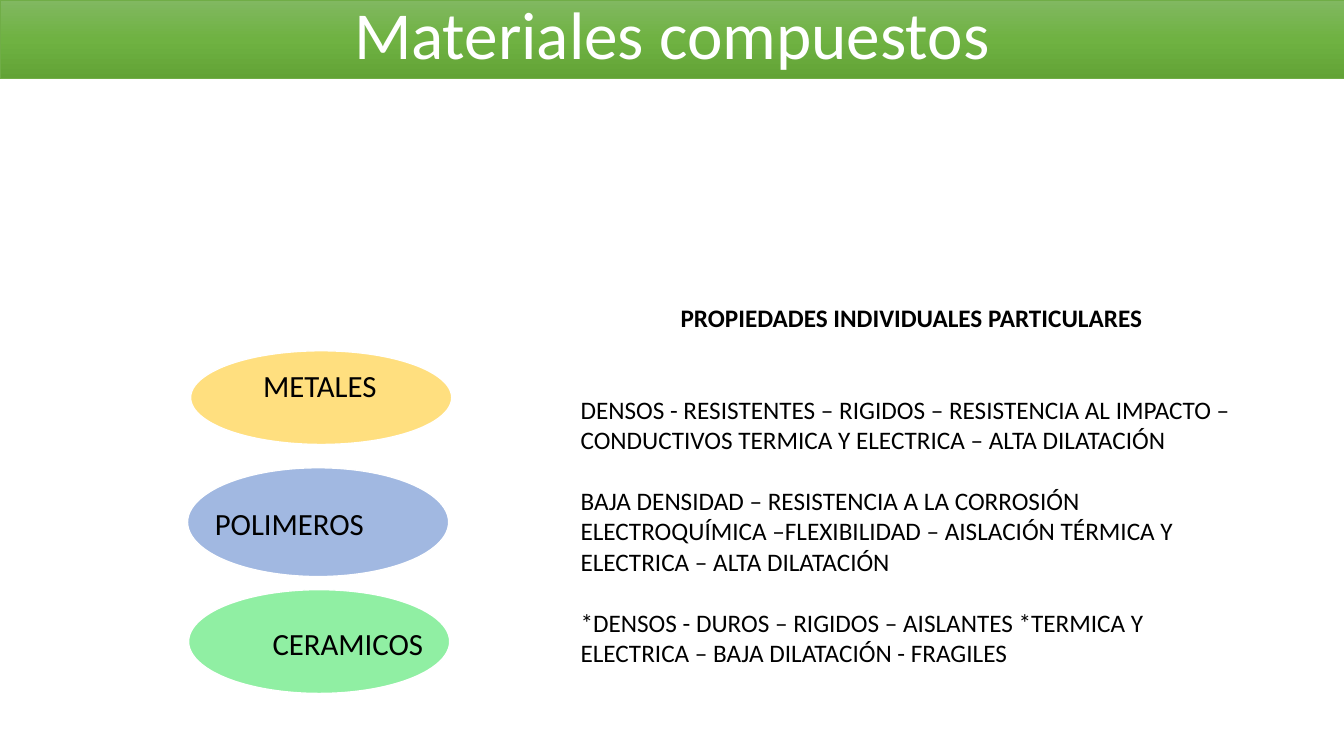
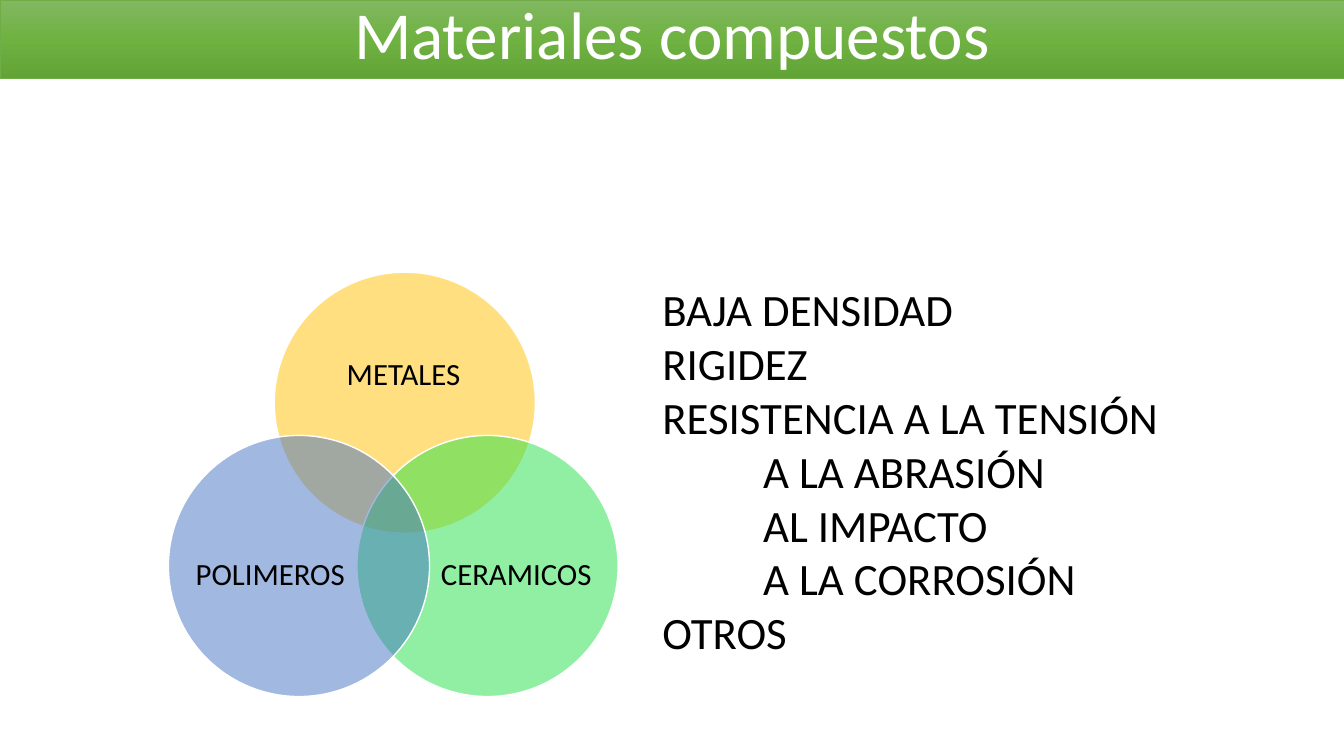
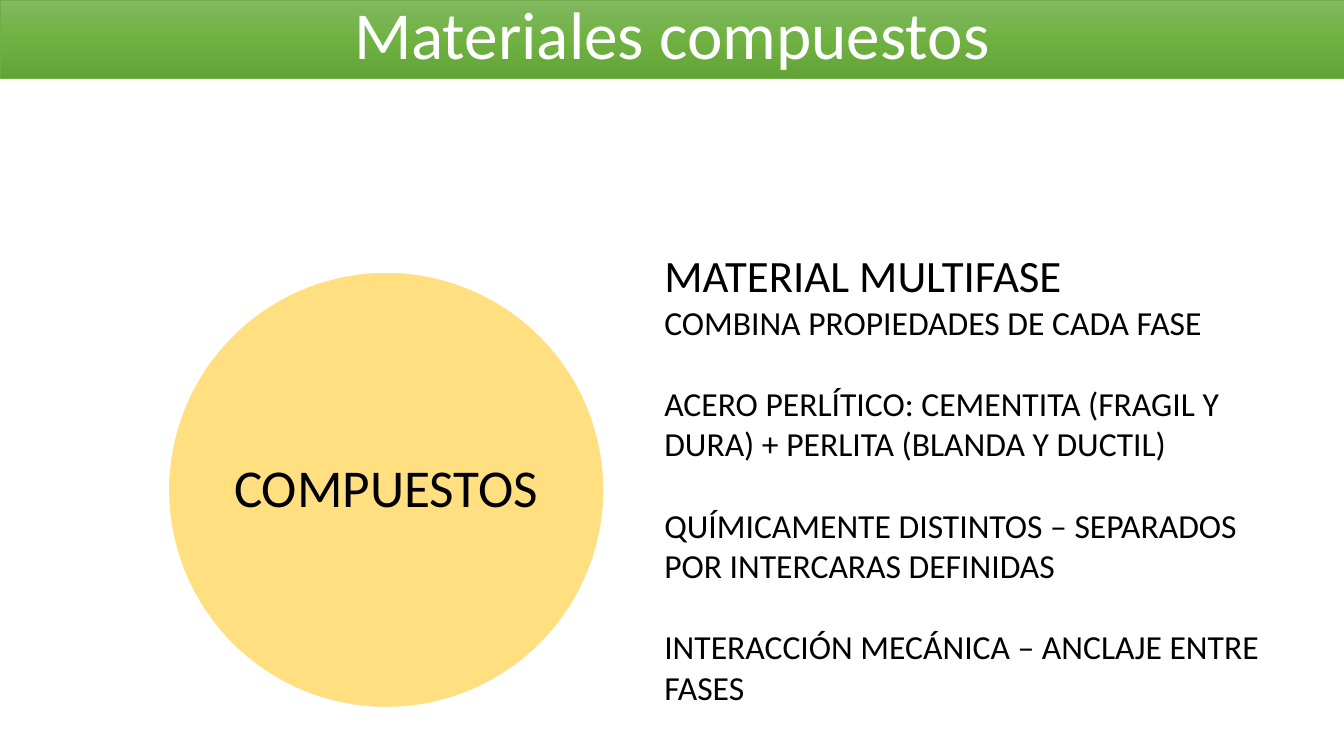
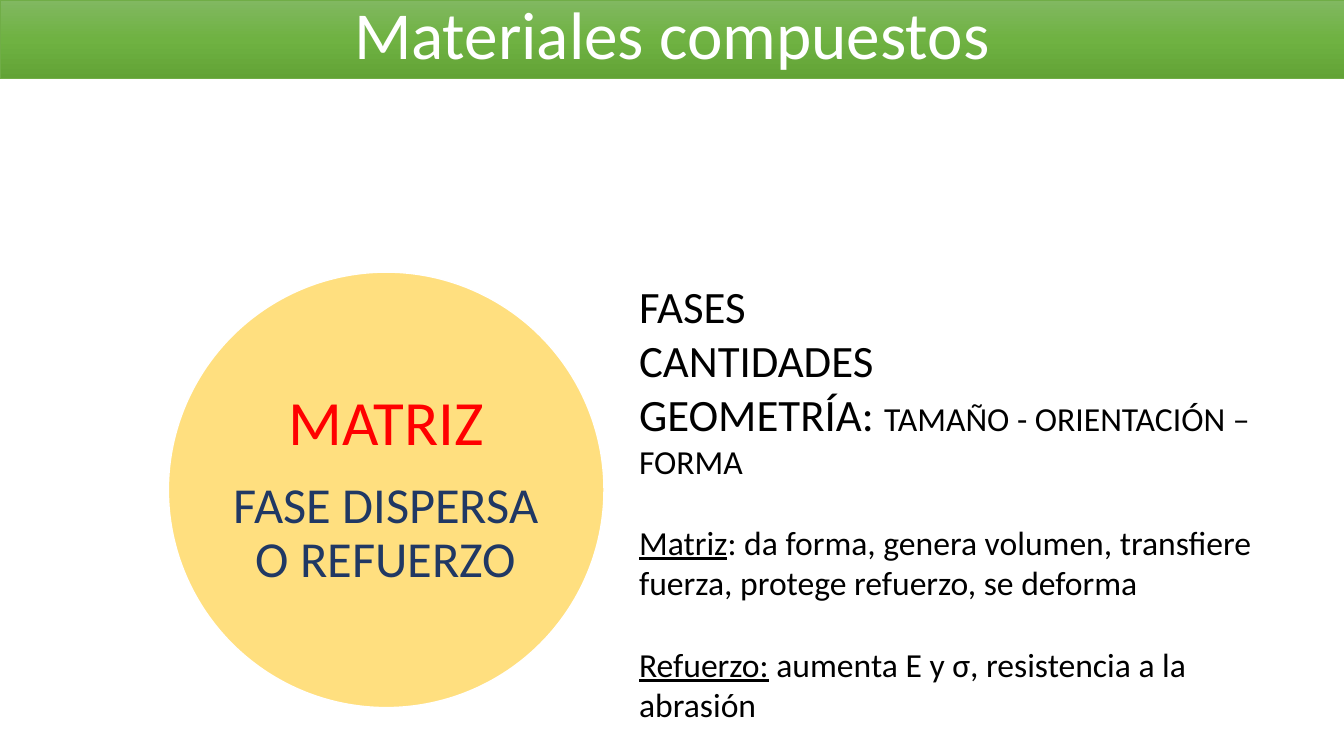
from copy import deepcopy
from dataclasses import dataclass
from typing import NamedTuple

from lxml.etree import SubElement
from pptx import Presentation
from pptx.dml.color import RGBColor
from pptx.enum.shapes import MSO_SHAPE as SHAPE
from pptx.enum.text import MSO_ANCHOR as ANCHOR, PP_ALIGN as ALIGN
from pptx.oxml.ns import qn
from pptx.util import Inches, Pt

WIDTH, HEIGHT = 13.33, 7.5
FONT = "Calibri"
TITLE = "Materiales compuestos"
COLORS = {
    "text": "000000", "white": "FFFFFF", "matrix": "FF0000", "reinforcement": "203864",
    "band_top": "81B861", "band_middle": "6FB242", "band_bottom": "62A336",
    "band_line": "70AD47",
    "metals": "FFC000", "polymers": "4472C4", "ceramics": "23E148",
}


class Box(NamedTuple):
    """Left, top, width and height in inches."""
    x: float
    y: float
    w: float
    h: float

    def inner(self, x, y, w, h):
        """Inner box, given as shares of this one."""
        return Box(self.x + x * self.w, self.y + y * self.h, w * self.w, h * self.h)

    def emu(self):
        return [Inches(v) for v in self]


@dataclass
class Par:
    """A paragraph; runs is a string or a list of (text, font settings)."""
    runs: object
    size: float
    before: float = 0
    after: float = 0
    indent: float = 0
    color: str = "text"
    bold: bool = False
    align: object = ALIGN.LEFT
    spacing: float = 1.0


PAGE = Box(0, 0, WIDTH, HEIGHT)
BIG_CIRCLE = Box(1.67, 2.7, 4.32, 4.32)
# Material: (label, label box as shares of its ellipse)
MATERIALS = {
    "metals": ("METALES", (0.13, 0.17, 0.73, 0.45)),
    "ceramics": ("CERAMICOS", (0.31, 0.26, 0.6, 0.55)),
    "polymers": ("POLIMEROS", (0.09, 0.26, 0.6, 0.55)),
}


def rgb(name):
    return RGBColor.from_string(COLORS[name])


def line_height(size):
    """Height of one line of the font, used as the gap between text groups."""
    return round(1.22 * size, 1)


def write(tf, pars):
    tf.word_wrap = True
    for i, par in enumerate(pars):
        p = tf.paragraphs[0] if i == 0 else tf.add_paragraph()
        p.alignment, p.line_spacing = par.align, par.spacing
        p.space_before, p.space_after = Pt(par.before), Pt(par.after)
        if par.indent:
            pPr = p._p.get_or_add_pPr()
            pPr.set("marL", str(Inches(par.indent)))
            pPr.set("indent", "0")
        p.font.name, p.font.size, p.font.bold = FONT, Pt(par.size), par.bold
        p.font.color.rgb = rgb(par.color)
        runs = [(par.runs, {})] if isinstance(par.runs, str) else par.runs
        for text, settings in runs:
            r = p.add_run()
            r.text = text
            r.font.size = settings.get("size")
            r.font.underline = settings.get("underline")


def add_text(slide, box, pars):
    tf = slide.shapes.add_textbox(*box.emu()).text_frame
    write(tf, pars)
    return tf


def add_label(slide, box, pars):
    """Centred text without margins."""
    for par in pars:
        par.align, par.spacing = ALIGN.CENTER, 0.9
    tf = add_text(slide, box, pars)
    tf.vertical_anchor = ANCHOR.MIDDLE
    tf.margin_left = tf.margin_right = tf.margin_top = tf.margin_bottom = 0


def add_title_band(slide, box):
    sp = slide.shapes.add_shape(SHAPE.RECTANGLE, *box.emu())
    sp.shadow.inherit = False
    sp.fill.gradient()
    sp.fill.gradient_angle = 270
    stops = sp._element.spPr.find(".//" + qn("a:gsLst"))
    stops.insert(1, deepcopy(stops[0]))
    names = ("band_top", "band_middle", "band_bottom")
    for i, (stop, name) in enumerate(zip(sp.fill.gradient_stops, names)):
        stop.color.rgb = rgb(name)
        stop.position = i / 2
    sp.line.color.rgb, sp.line.width = rgb("band_line"), Pt(0.5)
    sp.text_frame.vertical_anchor = ANCHOR.BOTTOM
    write(sp.text_frame, [Par(TITLE, 48, color="white", align=ALIGN.CENTER, spacing=0.9)])


def add_ellipse(slide, box, color):
    """Half-transparent ellipse with a white outline."""
    sp = slide.shapes.add_shape(SHAPE.OVAL, *box.emu())
    sp.shadow.inherit = False
    sp.fill.solid()
    sp.fill.fore_color.rgb = rgb(color)
    SubElement(sp._element.spPr.find(".//" + qn("a:srgbClr")), qn("a:alpha"), val="50000")
    sp.line.color.rgb, sp.line.width = rgb("white"), Pt(1)


def add_material(slide, box, name):
    label, shares = MATERIALS[name]
    add_ellipse(slide, box, name)
    add_label(slide, box.inner(*shares), [Par(label, 22)])


def add_big_circle(slide, box, pars):
    add_ellipse(slide, box, "metals")
    add_label(slide, box.inner(0.15, 0.15, 0.7, 0.7), pars)


def new_slide(prs):
    slide = prs.slides.add_slide(prs.slide_layouts[6])
    add_title_band(slide, PAGE.inner(0, 0, 1, 0.78 / HEIGHT))
    return slide


def materials_slide(prs, ellipses, text_box, pars):
    slide = new_slide(prs)
    for name, box in ellipses.items():
        add_material(slide, box, name)
    add_text(slide, text_box, pars)


def circle_slide(prs, circle_pars, text_box, pars):
    slide = new_slide(prs)
    add_big_circle(slide, BIG_CIRCLE, circle_pars)
    add_text(slide, text_box, pars)


def main():
    prs = Presentation()
    prs.slide_width, prs.slide_height = Inches(WIDTH), Inches(HEIGHT)

    diameter = 2.59
    gap = line_height(18)
    materials_slide(
        prs,
        {"metals": Box(1.89, 3.48, diameter, 0.93),
         "ceramics": Box(1.87, 5.85, diameter, 1.03),
         "polymers": Box(1.86, 4.64, diameter, 1.08)},
        Box(5.66, 2.95, 6.76, 4.04),
        [Par("PROPIEDADES INDIVIDUALES PARTICULARES", 18, bold=True, align=ALIGN.CENTER),
         Par("DENSOS - RESISTENTES – RIGIDOS – RESISTENCIA AL IMPACTO – "
             "CONDUCTIVOS TERMICA Y ELECTRICA – ALTA DILATACIÓN", 18, before=2 * gap),
         Par("BAJA DENSIDAD – RESISTENCIA A LA CORROSIÓN ELECTROQUÍMICA –FLEXIBILIDAD – "
             "AISLACIÓN TÉRMICA Y ELECTRICA – ALTA DILATACIÓN", 18, before=gap),
         Par("*DENSOS - DUROS – RIGIDOS – AISLANTES *TERMICA Y ELECTRICA – "
             "BAJA DILATACIÓN - FRAGILES", 18, before=gap)])

    materials_slide(
        prs,
        {"metals": Box(2.72, 2.7, diameter, diameter),
         "ceramics": Box(3.54, 4.32, diameter, diameter),
         "polymers": Box(1.67, 4.32, diameter, diameter)},
        Box(6.47, 2.75, 6.39, 3.87),
        [Par(text, 32, indent=indent) for text, indent in (
            ("BAJA DENSIDAD", 0), ("RIGIDEZ", 0), ("RESISTENCIA A LA TENSIÓN", 0),
            ("A LA ABRASIÓN", 1), ("AL IMPACTO", 1), ("A LA CORROSIÓN", 1),
            ("OTROS", 0))])

    gap = line_height(24)
    circle_slide(
        prs, [Par("COMPUESTOS", 38)], Box(6.49, 2.41, 6.39, 4.68),
        [Par("MATERIAL MULTIFASE", 32),
         Par("COMBINA PROPIEDADES DE CADA FASE", 24),
         Par("ACERO PERLÍTICO: CEMENTITA (FRAGIL Y DURA) + PERLITA (BLANDA Y DUCTIL)",
             24, before=gap),
         Par("QUÍMICAMENTE DISTINTOS – SEPARADOS POR INTERCARAS DEFINIDAS", 24, before=gap),
         Par("INTERACCIÓN MECÁNICA – ANCLAJE ENTRE FASES", 24, before=gap)])

    underlined = {"underline": True}
    circle_slide(
        prs,
        [Par("MATRIZ", 45, after=15, color="matrix"),
         Par("FASE DISPERSA O REFUERZO", 36, color="reinforcement")],
        Box(6.24, 2.72, 6.39, 4.54),
        [Par("FASES", 32),
         Par("CANTIDADES", 32),
         Par([("GEOMETRÍA: ", {}), ("TAMAÑO - ORIENTACIÓN – FORMA", {"size": Pt(24)})], 32),
         Par([("Matriz", underlined),
              (": da forma, genera volumen, transfiere fuerza, protege refuerzo, "
               "se deforma", {})], 24, before=gap),
         Par([("Refuerzo:", underlined),
              (" aumenta E y σ, resistencia a la abrasión", {})], 24, before=gap)])

    prs.save("out.pptx")


if __name__ == "__main__":
    main()
